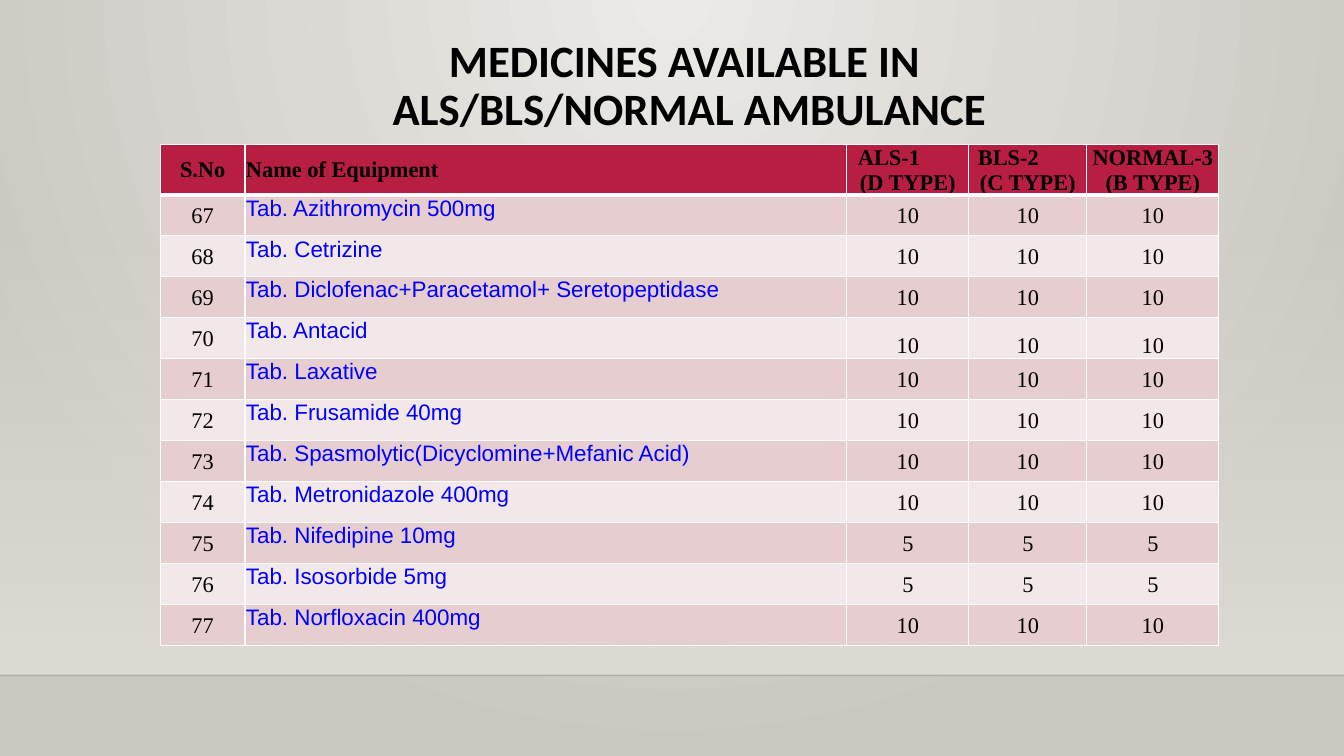
from dataclasses import dataclass

from lxml.etree import SubElement
from pptx import Presentation
from pptx.dml.color import RGBColor
from pptx.enum.shapes import MSO_CONNECTOR, MSO_SHAPE
from pptx.enum.text import MSO_ANCHOR as Anchor, PP_ALIGN as Align
from pptx.oxml.ns import qn
from pptx.util import Inches, Pt


@dataclass(frozen=True)
class Theme:
    black: str = "000000"
    white: str = "FFFFFF"
    crimson: str = "B71E42"
    band_dark: str = "E6CDCF"
    band_light: str = "F3E8E9"
    medicine: str = "0000FF"
    wall: str = "DFDBD5"
    glow: str = "ECEAE7"
    floor: str = "CAC7C1"
    title_font: str = "Calibri"
    table_font: str = "Times New Roman"
    medicine_font: str = "Arial"
    title_size: int = 32
    table_size: int = 16


THEME = Theme()
SLIDE_WIDTH, SLIDE_HEIGHT = 13.33, 7.5
FLOOR_TOP = 6.7
TABLE_LEFT, TABLE_TOP, TABLE_WIDTH, TABLE_HEIGHT = 1.59, 1.43, 10.5, 4.97
HEADER_HEIGHT = 0.5
COLUMN_WIDTHS = [0.84, 5.97, 1.21, 1.17, 1.31]
FIRST_NUMBER = 67
LOW_ANCHOR_NUMBER = 70
VEHICLES = [("ALS-1", "(D TYPE)", 0.1), ("BLS-2", "(C TYPE)", 0.08),
            ("NORMAL-3", "(B TYPE)", None)]
MEDICINES = [
    ("Tab. Azithromycin 500mg", 10),
    ("Tab. Cetrizine", 10),
    ("Tab. Diclofenac+Paracetamol+ Seretopeptidase", 10),
    ("Tab. Antacid", 10),
    ("Tab. Laxative", 10),
    ("Tab. Frusamide 40mg", 10),
    ("Tab. Spasmolytic(Dicyclomine+Mefanic Acid)", 10),
    ("Tab. Metronidazole 400mg", 10),
    ("Tab. Nifedipine 10mg", 5),
    ("Tab. Isosorbide 5mg", 5),
    ("Tab. Norfloxacin 400mg", 10),
]


def write_text(paragraph, text, *, font=THEME.table_font, size=THEME.table_size,
               color=THEME.black, bold=False, align=Align.CENTER, indent=None):
    paragraph.text = text
    paragraph.alignment = align
    if indent is not None:
        properties = paragraph._p.get_or_add_pPr()
        properties.set("marL", str(Inches(indent)))
        properties.set("indent", "0")
    for run in paragraph.runs:
        run.font.name = font
        run.font.size = Pt(size)
        run.font.bold = bold
        run.font.color.rgb = RGBColor.from_string(color)


def add_alpha(color_element, percent):
    SubElement(color_element, qn("a:alpha"), val=str(percent * 1000))


def set_gradient(fill, owner, start, end, *, start_alpha=100, focus=None):
    """Fade from start to end: downwards, or outwards from a focus rectangle."""
    fill.gradient()
    gradient = owner.find(".//" + qn("a:gradFill"))
    for child in list(gradient):
        gradient.remove(child)
    stops = SubElement(gradient, qn("a:gsLst"))
    for position, color, alpha in [(0, start, start_alpha), (100, end, 100)]:
        stop = SubElement(stops, qn("a:gs"), pos=str(position * 1000))
        add_alpha(SubElement(stop, qn("a:srgbClr"), val=color), alpha)
    if focus:
        shade = SubElement(gradient, qn("a:path"))
        shade.set("path", "circle")
        edges = {side: str(value * 1000) for side, value in zip("ltrb", focus)}
        SubElement(shade, qn("a:fillToRect"), **edges)
    else:
        SubElement(gradient, qn("a:lin"), ang="5400000", scaled="0")


def add_backdrop(slide):
    set_gradient(slide.background.fill, slide.element, THEME.glow, THEME.floor,
                 focus=(43, 0, 43, 100))
    wall_top = 2.21
    wall = slide.shapes.add_shape(
        MSO_SHAPE.RECTANGLE, 0, Inches(wall_top),
        Inches(SLIDE_WIDTH), Inches(FLOOR_TOP - wall_top))
    wall.shadow.inherit = False
    wall.line.fill.background()
    set_gradient(wall.fill, wall.element, THEME.wall, THEME.wall, start_alpha=0)

    edge = slide.shapes.add_connector(
        MSO_CONNECTOR.STRAIGHT, 0, Inches(FLOOR_TOP),
        Inches(SLIDE_WIDTH), Inches(FLOOR_TOP))
    edge.line.width = Pt(1)
    edge.line.color.rgb = RGBColor.from_string(THEME.black)
    add_alpha(edge.element.find(".//" + qn("a:ln")).find(".//" + qn("a:srgbClr")), 20)
    SubElement(edge.element.spPr, qn("a:effectLst"))


def format_title(title, text):
    title.left, title.top = Inches(TABLE_LEFT), Inches(0.29)
    title.width, title.height = Inches(TABLE_WIDTH), Inches(1.15)
    frame = title.text_frame
    frame.word_wrap = True
    frame.vertical_anchor = Anchor.MIDDLE
    paragraph = frame.paragraphs[0]
    write_text(paragraph, text, font=THEME.title_font, size=THEME.title_size, bold=True)
    paragraph.line_spacing = 0.9


def format_cell(cell, fill, *, anchor=Anchor.MIDDLE, top=1, bottom=1):
    """Fill and anchor a cell; top and bottom are border widths in points."""
    cell.margin_left = cell.margin_right = cell.margin_top = Inches(0.01)
    cell.margin_bottom = 0
    cell.vertical_anchor = anchor
    cell.fill.solid()
    cell.fill.fore_color.rgb = RGBColor.from_string(fill)
    properties = cell._tc.get_or_add_tcPr()
    borders = [("L", 1), ("R", 1), ("T", top), ("B", bottom)]
    for index, (side, width) in enumerate(borders):
        line = SubElement(properties, qn("a:ln" + side), w=str(Pt(width)))
        solid = SubElement(line, qn("a:solidFill"))
        SubElement(solid, qn("a:srgbClr"), val=THEME.white)
        properties.insert(index, line)


def fill_header(cells):
    for cell in cells:
        anchor = Anchor.BOTTOM if cell is cells[-1] else Anchor.MIDDLE
        format_cell(cell, THEME.crimson, anchor=anchor, bottom=3)
    write_text(cells[0].text_frame.paragraphs[0], "S.No", bold=True)
    write_text(cells[1].text_frame.paragraphs[0], "Name of Equipment",
               bold=True, align=Align.LEFT)
    for cell, (vehicle, category, indent) in zip(cells[2:], VEHICLES):
        frame = cell.text_frame
        align = Align.CENTER if indent is None else Align.LEFT
        write_text(frame.paragraphs[0], vehicle, bold=True, align=align, indent=indent)
        write_text(frame.add_paragraph(), category, bold=True)


def fill_medicine_row(cells, index, name, quantity):
    number = FIRST_NUMBER + index
    band = THEME.band_light if index % 2 else THEME.band_dark
    quantity_anchor = Anchor.BOTTOM if number == LOW_ANCHOR_NUMBER else Anchor.MIDDLE
    anchors = [Anchor.MIDDLE, Anchor.TOP] + [quantity_anchor] * len(VEHICLES)
    texts = [str(number), name] + [str(quantity)] * len(VEHICLES)
    for column, (cell, anchor, text) in enumerate(zip(cells, anchors, texts)):
        format_cell(cell, band, anchor=anchor, top=1 if index else 3)
        style = {}
        if column == 1:
            style = dict(font=THEME.medicine_font, color=THEME.medicine, align=Align.LEFT)
        write_text(cell.text_frame.paragraphs[0], text, **style)


def add_medicine_table(slide):
    table = slide.shapes.add_table(
        len(MEDICINES) + 1, len(COLUMN_WIDTHS), Inches(TABLE_LEFT), Inches(TABLE_TOP),
        Inches(TABLE_WIDTH), Inches(TABLE_HEIGHT)).table
    table.horz_banding = False
    for column, width in zip(table.columns, COLUMN_WIDTHS):
        column.width = Inches(width)
    header, *rows = table.rows
    header.height = Inches(HEADER_HEIGHT)
    fill_header(list(header.cells))
    for index, (row, (name, quantity)) in enumerate(zip(rows, MEDICINES)):
        row.height = Inches((TABLE_HEIGHT - HEADER_HEIGHT) / len(MEDICINES))
        fill_medicine_row(row.cells, index, name, quantity)


def main():
    presentation = Presentation()
    presentation.slide_width = Inches(SLIDE_WIDTH)
    presentation.slide_height = Inches(SLIDE_HEIGHT)
    slide = presentation.slides.add_slide(presentation.slide_layouts[5])
    add_backdrop(slide)
    format_title(slide.shapes.title, "MEDICINES AVAILABLE IN \vALS/BLS/NORMAL AMBULANCE")
    add_medicine_table(slide)
    presentation.save("out.pptx")


if __name__ == "__main__":
    main()
